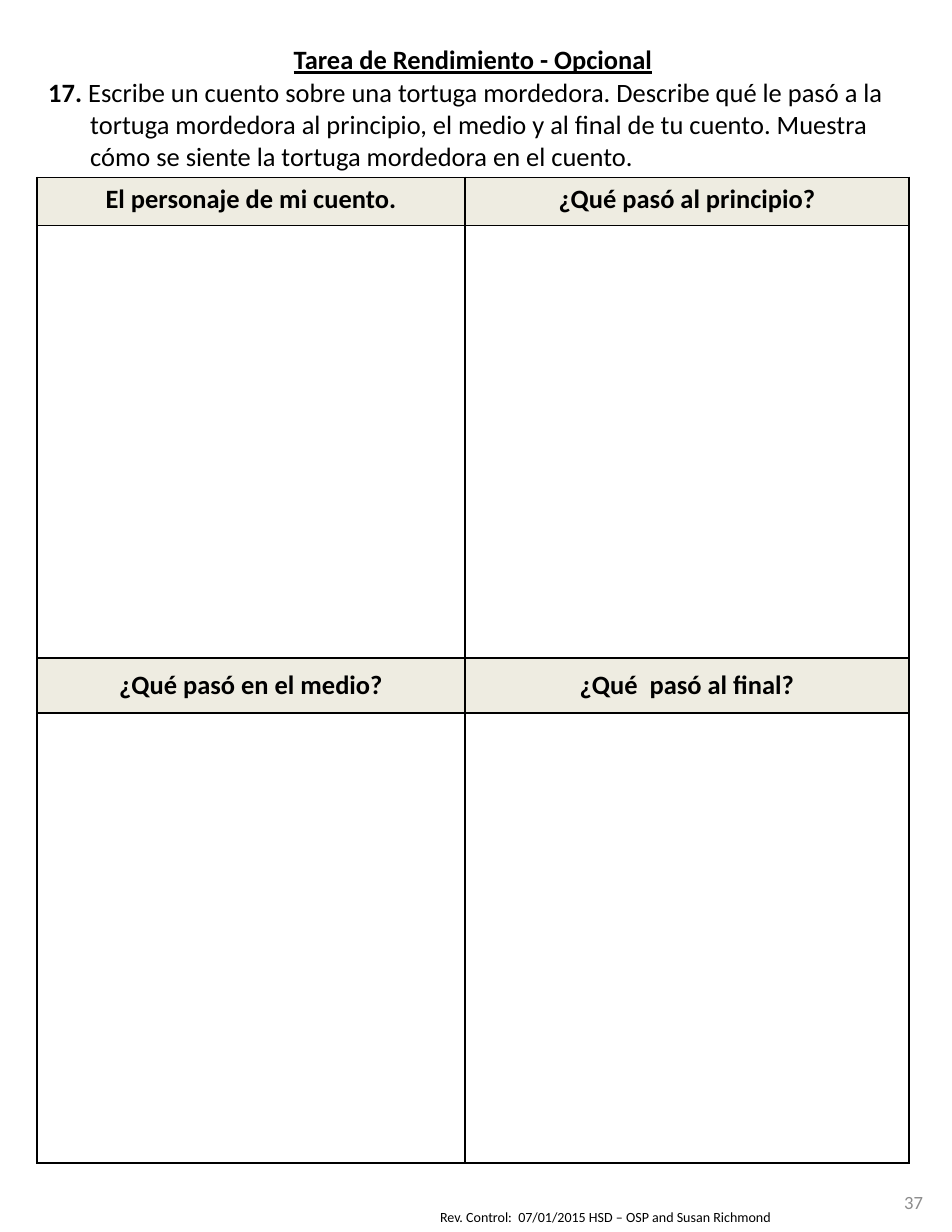
from lxml.etree import SubElement
from pptx import Presentation
from pptx.dml.color import RGBColor
from pptx.enum.text import MSO_ANCHOR, PP_ALIGN
from pptx.oxml.ns import qn
from pptx.util import Emu, Pt

BLACK, WHITE, GRAY, CREAM = "000000", "FFFFFF", "8C8C8C", "EEECE1"
TITLE = "Tarea de Rendimiento - Opcional"
TASK_NUMBER = "17. "
TASK = ("Escribe un cuento sobre una tortuga mordedora. Describe qué le pasó a la "
        "tortuga mordedora al principio, el medio y al final de tu cuento. Muestra "
        "cómo se siente la tortuga mordedora en el cuento.")
# Table row of each pair of headings, and how they are anchored
HEADINGS = [
    (1, MSO_ANCHOR.TOP, ("El personaje de mi cuento.", "¿Qué pasó al principio?")),
    (3, MSO_ANCHOR.MIDDLE, ("¿Qué pasó en el medio?", "¿Qué  pasó al final?")),
]
REVISION = "Rev. Control:  07/01/2015 HSD – OSP and Susan Richmond"
PAGE_NUMBER = "37"

TABLE_LEFT, TABLE_TOP = 37, 39
COLUMN_WIDTHS = (428, 444)
ROW_HEIGHTS = (138, 48, 433, 55, 450)
HANGING_INDENT = 42


def px(length):
    return Emu(round(length * 914400 / 112))


def color(value):
    return RGBColor.from_string(value)


def write(paragraph, text, size=17, ink=BLACK, bold=False, underline=False,
          align=PP_ALIGN.LEFT):
    paragraph.alignment = align
    run = paragraph.add_run()
    run.text = text
    font = run.font
    font.name, font.size = "Calibri", Pt(size)
    font.bold, font.underline = bold, underline
    font.color.rgb = color(ink)


def add_label(slide, box, text, anchor=MSO_ANCHOR.TOP, **style):
    frame = slide.shapes.add_textbox(*map(px, box)).text_frame
    frame.word_wrap = True
    frame.vertical_anchor = anchor
    write(frame.paragraphs[0], text, **style)


def set_borders(cell, edges):
    """Draw the given edges (letters of LRTB) in black and clear the others."""
    properties = cell._tc.get_or_add_tcPr()
    for edge in "LRTB":
        line = SubElement(properties, qn(f"a:ln{edge}"), w=str(Pt(1)))
        if edge in edges:
            fill = SubElement(line, qn("a:solidFill"))
            SubElement(fill, qn("a:srgbClr"), val=BLACK)
        else:
            SubElement(line, qn("a:noFill"))


def set_fill(cell, value):
    cell.fill.solid()
    cell.fill.fore_color.rgb = color(value)


def add_story_table(slide):
    table = slide.shapes.add_table(
        len(ROW_HEIGHTS), len(COLUMN_WIDTHS), px(TABLE_LEFT), px(TABLE_TOP),
        px(sum(COLUMN_WIDTHS)), px(sum(ROW_HEIGHTS))).table
    table.first_row = table.horz_banding = False
    for column, width in zip(table.columns, COLUMN_WIDTHS):
        column.width = px(width)
    for index, (row, height) in enumerate(zip(table.rows, ROW_HEIGHTS)):
        row.height = px(height)
        for cell in row.cells:
            set_borders(cell, "LRTB" if index else "B")
            set_fill(cell, WHITE)

    intro = table.cell(0, 0)
    intro.merge(table.cell(0, 1))
    write(intro.text_frame.paragraphs[0], TITLE, bold=True, underline=True,
          align=PP_ALIGN.CENTER)
    task = intro.text_frame.add_paragraph()
    write(task, TASK_NUMBER, bold=True)
    write(task, TASK)
    indent = px(HANGING_INDENT)
    task._p.get_or_add_pPr().set("marL", str(indent))
    task._p.get_or_add_pPr().set("indent", str(-indent))

    for row, anchor, headings in HEADINGS:
        for column, heading in enumerate(headings):
            cell = table.cell(row, column)
            cell.vertical_anchor = anchor
            set_fill(cell, CREAM)
            write(cell.text_frame.paragraphs[0], heading, bold=True,
                  align=PP_ALIGN.CENTER)


def main():
    deck = Presentation()
    deck.slide_width, deck.slide_height = px(952), px(1232)
    slide = deck.slides.add_slide(deck.slide_layouts[6])
    add_label(slide, (429, 1203, 476, 29), REVISION, size=9)
    add_label(slide, (831, 1179, 103, 47), PAGE_NUMBER, anchor=MSO_ANCHOR.MIDDLE,
              size=12, ink=GRAY, align=PP_ALIGN.RIGHT)
    add_story_table(slide)
    deck.save("out.pptx")


if __name__ == "__main__":
    main()
